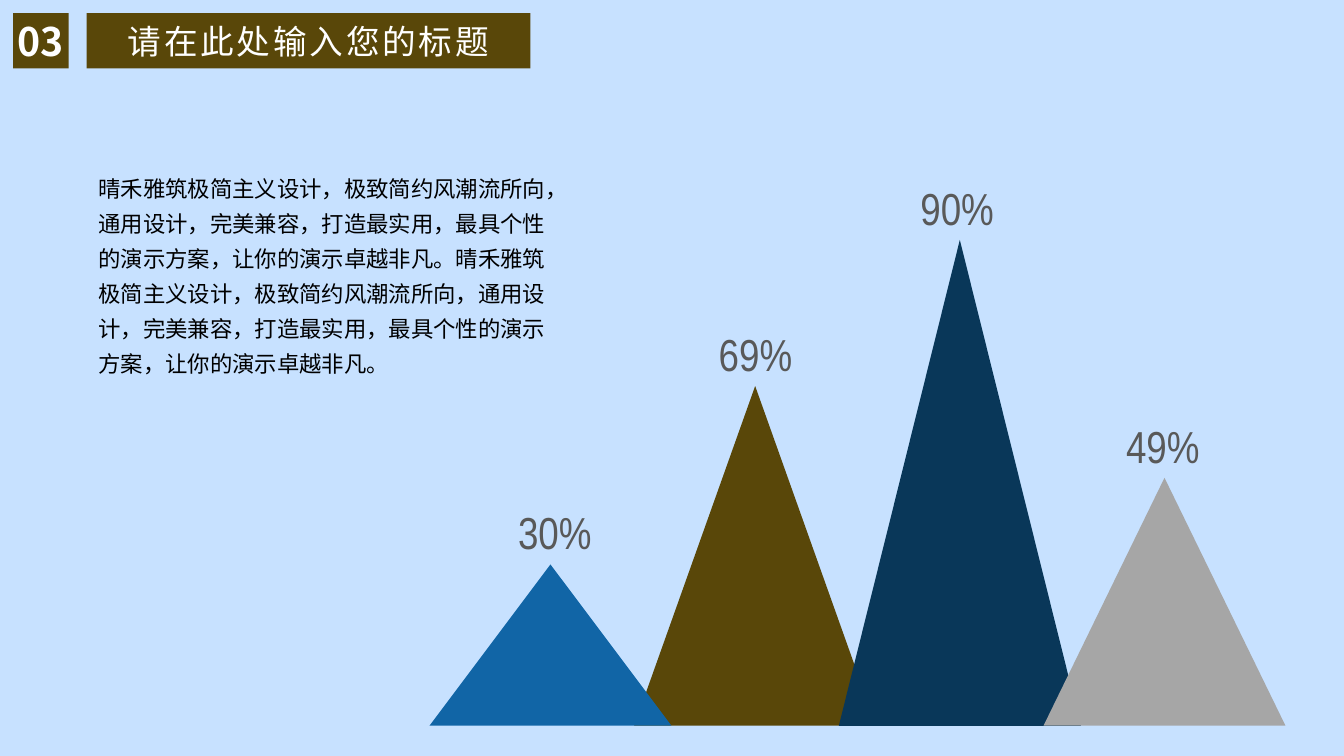
from lxml import etree
from pptx import Presentation
from pptx import util as u
from pptx.dml.color import RGBColor
from pptx.enum import shapes, text
from pptx.oxml.ns import qn

# Content
COLORS = {
    "sky": "C7E1FF", "brown": "594709", "blue": "1165A6", "navy": "093759",
    "grey": "A6A6A6", "label": "595959", "black": "000000", "white": "FFFFFF",
}
CJK, NARROW = "Noto Sans CJK SC", "Arial Narrow"
NUMBER = "03"
TITLE = "请在此处输入您的标题"
SENTENCE = "晴禾雅筑极简主义设计，极致简约风潮流所向，通用设计，完美兼容，打造最实用，最具个性的演示方案，让你的演示卓越非凡。"
INTRO = SENTENCE * 2
# Back to front: column, share, colour, peak y, label left
PEAKS = [
    (1, "69%", "brown", 383, 703),
    (0, "30%", "blue", 560, 504),
    (2, "90%", "navy", 238, 903),
    (3, "49%", "grey", 474, 1107),
]

# Layout in px, 100 to the inch
PX = 9144
FIRST_PEAK, PEAK_STEP, HALF_BASE, BASELINE = 546, 203, 120, 720
LABEL_W, LABEL_H = 100, 64
BAR_TOP, BAR_H = 13, 55


def box(*lengths):
    return [length * PX for length in lengths]


def paint(shape, color):
    shape.fill.solid()
    shape.fill.fore_color.rgb = RGBColor.from_string(COLORS[color])
    shape.line.fill.background()


def write(shape, words, color, font, frame=None, paragraph=None):
    for name, value in (frame or {}).items():
        setattr(shape.text_frame, name, value)
    line = shape.text_frame.paragraphs[0]
    for name, value in (paragraph or {}).items():
        setattr(line, name, value)
    run = line.add_run()
    run.text = words
    run.font.color.rgb = RGBColor.from_string(COLORS[color])
    for name, value in font.items():
        setattr(run.font, name, value)
    props = run.font._element
    etree.SubElement(props, qn("a:ea")).set("typeface", font["name"])
    return props


deck = Presentation()
deck.slide_width, deck.slide_height = box(1333, 750)
slide = deck.slides.add_slide(deck.slide_layouts[5])
slide.background.fill.solid()
slide.background.fill.fore_color.rgb = RGBColor.from_string(COLORS["sky"])

# Title bar
title = slide.shapes.title
title.left, title.top, title.width, title.height = box(86, BAR_TOP, 440, BAR_H)
paint(title, "brown")
title_props = write(
    title, TITLE, "white", {"name": CJK, "size": u.Pt(24), "bold": False},
    {"word_wrap": True, "auto_size": text.MSO_AUTO_SIZE.NONE,
     "vertical_anchor": text.MSO_ANCHOR.MIDDLE},
    {"alignment": text.PP_ALIGN.CENTER})
title_props.set("spc", "200")

# Section number
number = slide.shapes.add_shape(
    shapes.MSO_SHAPE.RECTANGLE, *box(13, BAR_TOP, BAR_H, BAR_H))
number.shadow.inherit = False
paint(number, "brown")
write(number, NUMBER, "white", {"name": CJK, "size": u.Pt(28), "bold": True},
      {"margin_left": 0, "margin_right": 0, "margin_top": 0, "margin_bottom": 0,
       "word_wrap": True, "vertical_anchor": text.MSO_ANCHOR.MIDDLE},
      {"alignment": text.PP_ALIGN.CENTER})

# Mountains
for column, share, color, peak_y, label_x in PEAKS:
    peak_x = FIRST_PEAK + PEAK_STEP * column
    outline = slide.shapes.build_freeform(peak_x, peak_y, scale=PX)
    outline.add_line_segments(
        [(peak_x + HALF_BASE, BASELINE), (peak_x - HALF_BASE, BASELINE)])
    mountain = outline.convert_to_shape()
    mountain.shadow.inherit = False
    paint(mountain, color)

# Shares above the peaks
for column, share, color, peak_y, label_x in PEAKS:
    label = slide.shapes.add_textbox(
        *box(label_x, peak_y - LABEL_H, LABEL_W, LABEL_H))
    write(label, share, "label", {"name": NARROW, "size": u.Pt(32)},
          {"word_wrap": False, "auto_size": text.MSO_AUTO_SIZE.SHAPE_TO_FIT_TEXT})

# Introduction
intro = slide.shapes.add_textbox(*box(88, 160, 464, 220))
write(intro, INTRO, "black", {"name": CJK, "size": u.Pt(16)},
      {"word_wrap": True, "auto_size": text.MSO_AUTO_SIZE.SHAPE_TO_FIT_TEXT,
       "vertical_anchor": text.MSO_ANCHOR.MIDDLE},
      {"line_spacing": 1.3, "space_after": u.Pt(6)})

deck.save("out.pptx")
